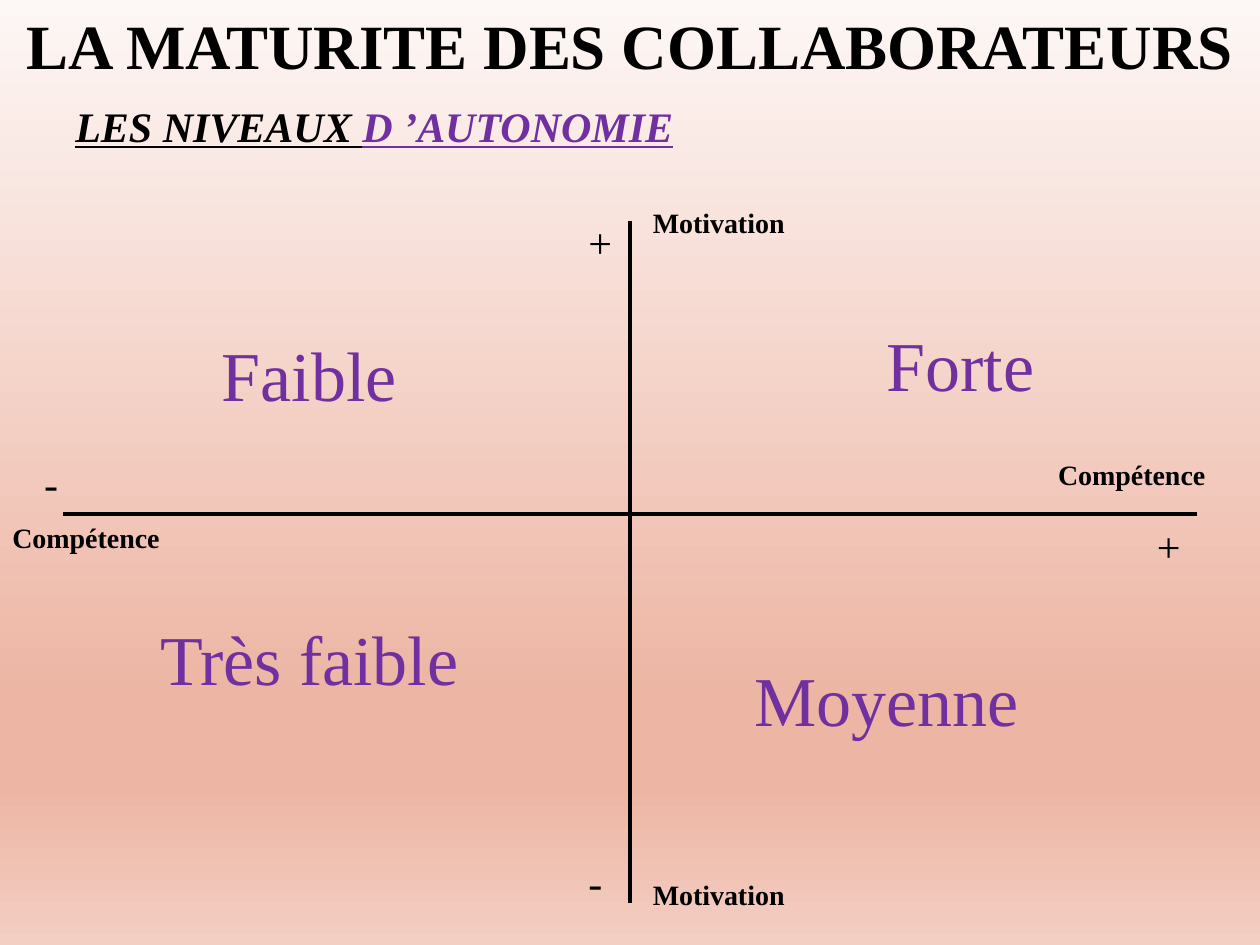
from lxml.etree import SubElement
from pptx import Presentation
from pptx.dml.color import RGBColor
from pptx.enum.shapes import MSO_CONNECTOR
from pptx.enum.text import MSO_ANCHOR, MSO_AUTO_SIZE, PP_ALIGN
from pptx.oxml.ns import qn
from pptx.util import Cm, Pt

BLACK = "000000"
PURPLE = "7030A0"
BACKGROUND_STOPS = [(0, "FDF7F5"), (74, "EDB5A4"), (83, "EDB5A4"), (100, "F3CEC2")]


def color(hex_string):
    return RGBColor.from_string(hex_string)


class SlideBuilder:
    font_name = "Times New Roman"
    axis_width = Pt(2.25)

    def __init__(self, slide):
        self.slide = slide

    def background(self, stops):
        fill = self.slide.background.fill
        fill.gradient()
        fill.gradient_angle = 270
        properties = self.slide.element.cSld.find(qn("p:bg")).find(qn("p:bgPr"))
        stop_list = properties.find(qn("a:gradFill")).find(qn("a:gsLst"))
        for stop in list(stop_list):
            stop_list.remove(stop)
        for position, hex_string in stops:
            stop = SubElement(stop_list, qn("a:gs"), pos=str(position * 1000))
            SubElement(stop, qn("a:srgbClr"), val=hex_string)

    def fill_text(self, shape, runs, size, alignment, bold=False, italic=False, underline=False):
        text_frame = shape.text_frame
        text_frame.word_wrap = True
        text_frame.auto_size = MSO_AUTO_SIZE.NONE
        text_frame.vertical_anchor = MSO_ANCHOR.TOP
        paragraph = text_frame.paragraphs[0]
        paragraph.alignment = alignment
        for text, hex_string in runs:
            run = paragraph.add_run()
            run.text = text
            font = run.font
            font.name = self.font_name
            font.size = Pt(size)
            font.bold = bold
            font.italic = italic
            font.underline = underline
            font.color.rgb = color(hex_string)

    def title(self, text, width, height):
        shape = self.slide.shapes.title
        shape.left, shape.top, shape.width, shape.height = 0, 0, Cm(width), Cm(height)
        self.fill_text(shape, [(text, BLACK)], 36, PP_ALIGN.CENTER, bold=True)

    def text(self, runs, left, top, width, height, size, alignment=PP_ALIGN.LEFT, **style):
        shape = self.slide.shapes.add_textbox(Cm(left), Cm(top), Cm(width), Cm(height))
        self.fill_text(shape, runs, size, alignment, **style)

    def axis_label(self, text, left, top, width, alignment=PP_ALIGN.LEFT):
        self.text([(text, BLACK)], left, top, width, 0.94, 16, alignment, bold=True)

    def sign(self, text, left, top):
        self.text([(text, BLACK)], left, top, 1.09, 1.27, 24)

    def level(self, text, left, top):
        self.text([(text, PURPLE)], left, top, 6.55, 1.96, 40, PP_ALIGN.CENTER)

    def axis(self, start_x, start_y, end_x, end_y):
        connector = self.slide.shapes.add_connector(
            MSO_CONNECTOR.STRAIGHT, Cm(start_x), Cm(start_y), Cm(end_x), Cm(end_y))
        connector.line.color.rgb = color(BLACK)
        connector.line.width = self.axis_width
        SubElement(connector.element.spPr, qn("a:effectLst"))


def main():
    presentation = Presentation()
    presentation.slide_width = Cm(25.4)
    presentation.slide_height = Cm(19.05)
    slide = presentation.slides.add_slide(presentation.slide_layouts[5])
    builder = SlideBuilder(slide)

    builder.background(BACKGROUND_STOPS)
    builder.title("LA MATURITE DES COLLABORATEURS", 25.4, 1.78)
    builder.text([("LES NIVEAUX ", BLACK), ("D ’AUTONOMIE", PURPLE)],
                 1.27, 1.9, 14.17, 1.27, 24, bold=True, italic=True, underline=True)

    center_x, center_y = 12.7, 10.37
    builder.axis(center_x, 4.45, center_x, 18.2)
    builder.axis(1.27, center_y, 24.13, center_y)

    for top in (4.02, 17.57):
        builder.axis_label("Motivation", 12.91, top, 3.6)
    builder.axis_label("Compétence", 0, center_y, 4.65)
    builder.axis_label("Compétence", 19.9, 9.1, 4.65, PP_ALIGN.RIGHT)

    for text, left, top in [("+", 11.61, 4.23), ("+", 23.07, center_y),
                            ("-", 11.61, 17.15), ("-", 0.64, 9.1)]:
        builder.sign(text, left, top)

    for text, left, top in [("Très faible", 2.96, 12.28), ("Faible", 2.96, 6.56),
                            ("Moyenne", 14.6, 13.12), ("Forte", 16.09, 6.35)]:
        builder.level(text, left, top)

    presentation.save("out.pptx")


if __name__ == "__main__":
    main()
